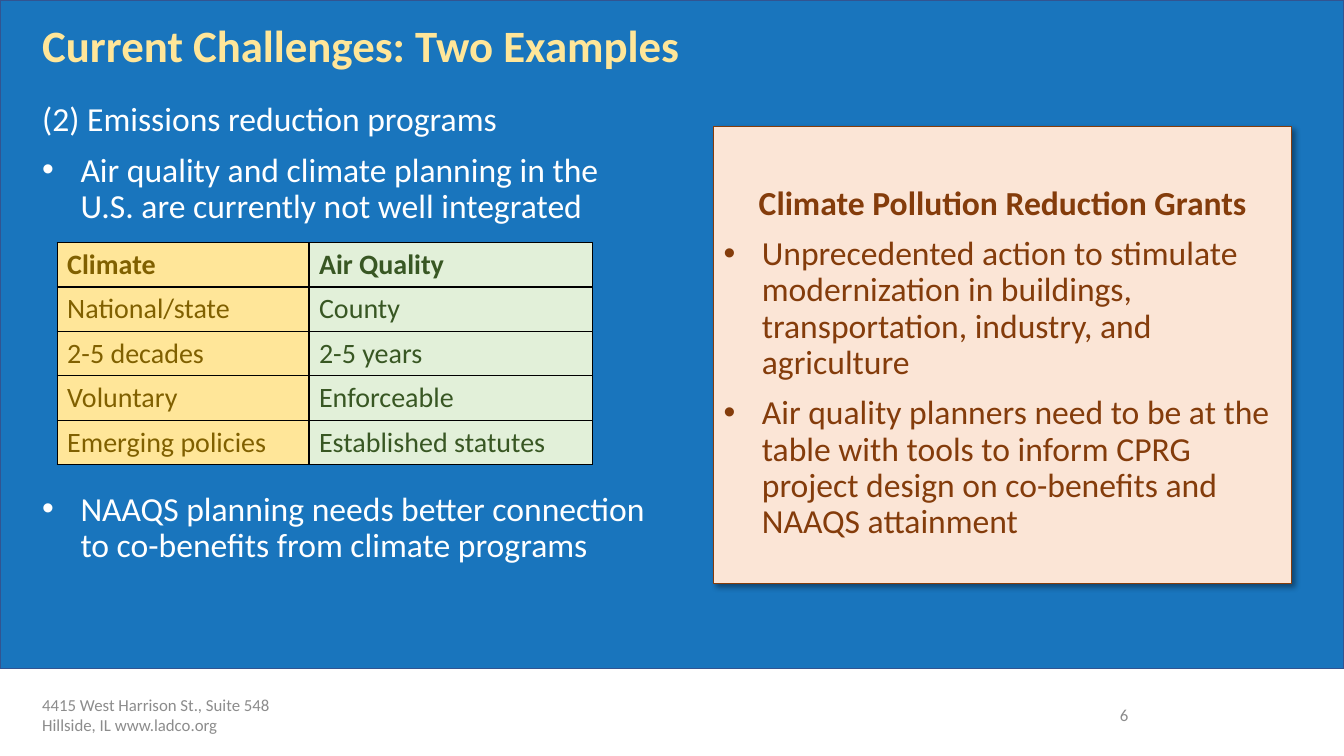
from collections import namedtuple
from lxml.etree import SubElement
from pptx import Presentation
from pptx.dml.color import RGBColor
from pptx.enum.shapes import MSO_SHAPE as Shape
from pptx.enum.text import MSO_ANCHOR as Anchor, PP_ALIGN as Align
from pptx.oxml import parse_xml
from pptx.oxml.ns import nsdecls, qn
from pptx.util import Inches, Pt

Box = namedtuple("Box", "left top width height")
WIDTH, HEIGHT = Inches(13.33), Inches(7.5)
FONT = "Calibri"
WHITE, BLUE, NAVY, GREY = "FFFFFF", "1975BD", "325491", "8C8C8C"
GOLD, OCHRE, MINT, GREEN = "FFE699", "806000", "E2F0D9", "385723"
PEACH, BROWN, BLACK = "FBE5D6", "843C0B", "000000"

ROWS = [
    ("Climate", "Air Quality"),
    ("National/state", "County"),
    ("2-5 decades", "2-5 years"),
    ("Voluntary", "Enforceable"),
    ("Emerging policies", "Established statutes"),
]
COLUMN_COLOURS = [(GOLD, OCHRE), (MINT, GREEN)]


def color(value):
    return RGBColor.from_string(value)


def percent(left, top, width, height):
    return Box(int(WIDTH * left / 100), int(HEIGHT * top / 100),
               int(WIDTH * width / 100), int(HEIGHT * height / 100))


def part(box, left, top, width, height):
    return Box(int(box.left + box.width * left), int(box.top + box.height * top),
               int(box.width * width), int(box.height * height))


def write(para, text, size, ink, bold=False):
    run = para.add_run()
    run.text = text
    run.font.name = FONT
    run.font.size = Pt(size)
    run.font.bold = bold
    run.font.color.rgb = color(ink)


def add_bullet(para):
    properties = para._p.get_or_add_pPr()
    properties.set("marL", str(Inches(0.38)))
    properties.set("indent", str(-Inches(0.38)))
    SubElement(properties, qn("a:buFont"), typeface="Arial")
    SubElement(properties, qn("a:buChar"), char="•")


def fill_paragraphs(frame, lines, ink):
    frame.word_wrap = True
    for index, (text, bulleted) in enumerate(lines):
        para = frame.paragraphs[0] if index == 0 else frame.add_paragraph()
        if bulleted:
            add_bullet(para)
        para.alignment = Align.LEFT
        para.line_spacing = 0.9
        if index:
            para.space_before = Pt(10)
        write(para, text, 24, ink)


def add_line(page, box, text, size, ink, anchor, align=Align.LEFT, bold=False):
    frame = page.shapes.add_textbox(*box).text_frame
    frame.word_wrap = True
    frame.vertical_anchor = anchor
    para = frame.paragraphs[0]
    para.alignment = align
    write(para, text, size, ink, bold)
    return para


def add_panel(page, box, fill, edge, weight):
    panel = page.shapes.add_shape(Shape.RECTANGLE, *box)
    panel.shadow.inherit = False
    panel.fill.solid()
    panel.fill.fore_color.rgb = color(fill)
    panel.line.color.rgb = color(edge)
    panel.line.width = Pt(weight)
    return panel


def add_footer(page, box):
    add_line(page, part(box, 0, 0, 0.26, 1),
             "4415 West Harrison St., Suite 548 Hillside, IL www.ladco.org",
             12, GREY, Anchor.MIDDLE)
    add_line(page, part(box, 0.73, 0.14, 0.27, 0.72), "6", 12, GREY,
             Anchor.MIDDLE, Align.RIGHT)


def add_programs(page, box):
    intro = page.shapes.add_textbox(*part(box, 0, 0, 1, 0.25))
    fill_paragraphs(intro.text_frame, [
        ("(2) Emissions reduction programs", False),
        ("Air quality and climate planning in the U.S. are currently not well integrated", True),
    ], WHITE)
    add_comparison(page, part(box, 0.04, 0.26, 0.86, 0.4))
    closing = page.shapes.add_textbox(*part(box, 0, 0.7, 1, 0.17))
    fill_paragraphs(closing.text_frame, [
        ("NAAQS planning needs better connection to co-benefits from climate programs", True),
    ], WHITE)


def add_border(cell):
    properties = cell._tc.get_or_add_tcPr()
    for index, side in enumerate(("lnL", "lnR", "lnT", "lnB")):
        properties.insert(index, parse_xml(
            f'<a:{side} {nsdecls("a")} w="{Pt(1)}"><a:solidFill>'
            f'<a:srgbClr val="{BLACK}"/></a:solidFill></a:{side}>'))


def add_comparison(page, box):
    table = page.shapes.add_table(len(ROWS), len(COLUMN_COLOURS), *box).table
    table.horz_banding = False
    for column, share in zip(table.columns, (0.47, 0.53)):
        column.width = int(box.width * share)
    for row_index, texts in enumerate(ROWS):
        for column_index, text in enumerate(texts):
            fill, ink = COLUMN_COLOURS[column_index]
            cell = table.cell(row_index, column_index)
            cell.fill.solid()
            cell.fill.fore_color.rgb = color(fill)
            add_border(cell)
            write(cell.text_frame.paragraphs[0], text, 20, ink, row_index == 0)


def add_soft_shadow(shape):
    effects = shape._element.spPr.find(qn("a:effectLst"))
    effects.append(parse_xml(
        f'<a:outerShdw {nsdecls("a")} blurRad="{Pt(4)}" dist="{Pt(3)}" '
        f'dir="2700000" algn="tl" rotWithShape="0"><a:srgbClr val="{BLACK}">'
        '<a:alpha val="40000"/></a:srgbClr></a:outerShdw>'))


def add_grants_card(page, box):
    card = add_panel(page, box, PEACH, BROWN, 0.75)
    add_soft_shadow(card)
    frame = card.text_frame
    frame.vertical_anchor = Anchor.TOP
    frame.margin_top = int(box.height * 0.13)
    fill_paragraphs(frame, [
        ("Climate Pollution Reduction Grants", False),
        ("Unprecedented action to stimulate modernization in buildings, "
         "transportation, industry, and agriculture", True),
        ("Air quality planners need to be at the table with tools to inform CPRG "
         "project design on co-benefits and NAAQS attainment", True),
    ], BROWN)
    heading = frame.paragraphs[0]
    heading.alignment = Align.CENTER
    heading.runs[0].font.bold = True


def main():
    deck = Presentation()
    deck.slide_width, deck.slide_height = WIDTH, HEIGHT
    page = deck.slides.add_slide(deck.slide_layouts[6])
    add_panel(page, percent(0, 0, 100, 88.4), BLUE, NAVY, 1)
    add_footer(page, percent(2.4, 90.8, 82.3, 7.5))
    title = add_line(page, percent(2.4, 1.73, 50.65, 8.53),
                     "Current Challenges: Two Examples", 32, GOLD,
                     Anchor.BOTTOM, bold=True)
    title.line_spacing = 0.9
    add_programs(page, percent(2.4, 12.93, 46.35, 73.6))
    add_grants_card(page, percent(53.1, 16.8, 43, 60.4))
    deck.save("out.pptx")


if __name__ == "__main__":
    main()
